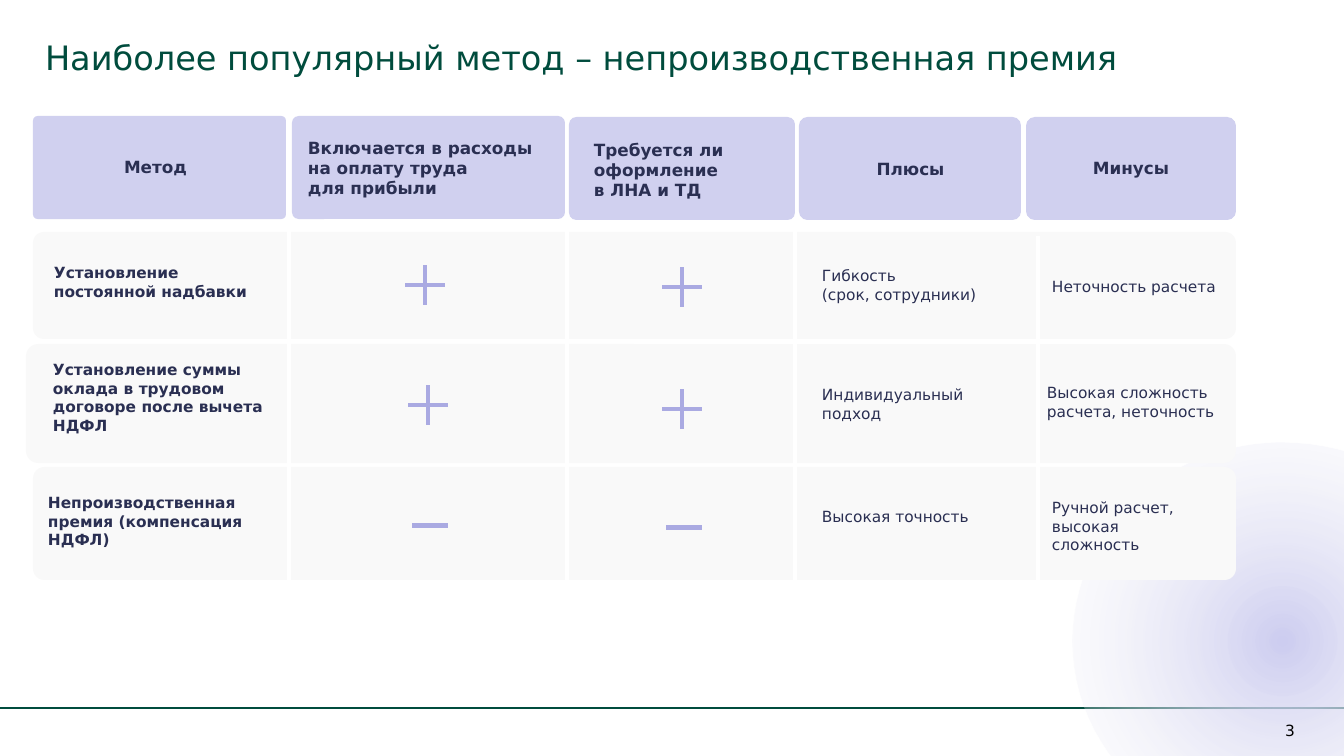
from lxml import etree
from pptx import Presentation
from pptx import util as u
from pptx.dml.color import RGBColor
from pptx.enum import shapes, text
from pptx.oxml.ns import qn

PX = 914400 / 50.4
COLORS = {
    "green": "004C3D", "navy": "2A2F52", "lavender": "D0D0EF", "row": "F9F9F9",
    "sign": "AAAAE2", "glow": "CECEF1", "white": "FFFFFF", "black": "000000",
}


def emu(px):
    return u.Emu(round(px * PX))


class Painter:
    font = "DejaVu Sans"

    def __init__(self, slide):
        self.slide = slide

    def color(self, name):
        return RGBColor.from_string(COLORS[name])

    def fill_text(self, shape, content, size, color="navy", bold=False,
                  align=text.PP_ALIGN.LEFT, spacing=None, inset=None, wrap=True):
        frame = shape.text_frame
        frame.word_wrap = wrap
        frame.auto_size = text.MSO_AUTO_SIZE.SHAPE_TO_FIT_TEXT
        frame.vertical_anchor = text.MSO_ANCHOR.TOP
        if inset is not None:
            frame.margin_left = frame.margin_right = emu(inset)
            frame.margin_top = frame.margin_bottom = emu(inset)
        for number, lines in enumerate(content):
            paragraph = frame.add_paragraph() if number else frame.paragraphs[0]
            paragraph.alignment = align
            if spacing:
                paragraph.line_spacing = spacing
            for index, line in enumerate(lines.split("\n")):
                if index:
                    paragraph.add_line_break()
                run = paragraph.add_run()
                run.text = line
                run.font.name = self.font
                run.font.size = u.Pt(size)
                run.font.bold = bold
                run.font.color.rgb = self.color(color)

    def title(self, box, content):
        shape = self.slide.shapes.title
        shape.left, shape.top, shape.width, shape.height = map(emu, box)
        self.fill_text(shape, [content], 48, "green", inset=3)

    def label(self, box, content, size=22, **style):
        shape = self.slide.shapes.add_textbox(*map(emu, box))
        self.fill_text(shape, content, size, **style)

    def shape(self, kind, box, color, adjustment=None):
        shape = self.slide.shapes.add_shape(kind, *map(emu, box))
        shape.shadow.inherit = False
        shape.line.fill.background()
        shape.fill.solid()
        shape.fill.fore_color.rgb = self.color(color)
        if adjustment is not None:
            shape.adjustments[0] = adjustment
        return shape

    def glow(self, box):
        shape = self.shape(shapes.MSO_SHAPE.OVAL, box, "glow")
        solid = shape._element.spPr.find(qn("a:solidFill"))
        gradient = etree.Element(qn("a:gradFill"), rotWithShape="1")
        stops = etree.SubElement(gradient, qn("a:gsLst"))
        for position, name in (("0", "glow"), ("100000", "row")):
            stop = etree.SubElement(stops, qn("a:gs"), pos=position)
            color = etree.SubElement(stop, qn("a:srgbClr"), val=COLORS[name])
        etree.SubElement(color, qn("a:alpha"), val="0")
        circle = etree.SubElement(gradient, qn("a:path"), path="circle")
        etree.SubElement(circle, qn("a:fillToRect"), l="50000", t="50000", r="50000", b="50000")
        solid.getparent().replace(solid, gradient)

    def line(self, start, end, color, width):
        connector = self.slide.shapes.add_connector(
            shapes.MSO_CONNECTOR.STRAIGHT, *map(emu, start + end))
        connector.line.color.rgb = self.color(color)
        connector.line.width = u.Pt(width)
        etree.SubElement(connector._element.spPr, qn("a:effectLst"))


CENTER = text.PP_ALIGN.CENTER
ROUNDED = shapes.MSO_SHAPE.ROUNDED_RECTANGLE
ROWS = [(33, 232, 1203, 107), (26, 344, 1210, 119), (33, 467, 1203, 113)]
DIVIDERS = [(289, 215, 652), (567, 220, 657), (795, 215, 640), (1038, 236, 673)]
HEADERS = [
    ((33, 116, 253, 103), 0.045, (29, 158, 253, 21), "Метод",
     {"align": CENTER, "spacing": 0.8}),
    ((292, 116, 273, 103), 0.065, (303, 135, 241, 66),
     "Включается в расходы\nна оплату труда\nдля прибыли", {}),
    ((569, 117, 226, 103), 0.072, (589, 137, 254, 66),
     "Требуется ли оформление\nв ЛНА и ТД", {}),
    ((799, 117, 222, 103), 0.081, (800, 156, 221, 25), "Плюсы", {"align": CENTER}),
    ((1026, 117, 210, 103), 0.085, (1032, 155, 198, 25), "Минусы", {"align": CENTER}),
]
SIGNS = [
    (shapes.MSO_SHAPE.MATH_PLUS, 54, 0.072, [(398, 258), (655, 260), (401, 378), (655, 382)]),
    (shapes.MSO_SHAPE.MATH_MINUS, 49, 0.083, [(406, 501), (660, 503)]),
]
METHODS = [
    ((49, 261, 230, 42), ["Установление", "постоянной надбавки"]),
    ((48, 358, 231, 80), ["Установление суммы оклада в трудовом договоре после вычета НДФЛ"]),
    ((43, 491, 239, 61), ["Непроизводственная премия (компенсация НДФЛ)"]),
]
REMARKS = [
    ((817, 264, 208, 42), "Гибкость\n(срок, сотрудники)", None),
    ((817, 383, 198, 42), "Индивидуальный подход", None),
    ((817, 508, 169, 20), "Высокая точность", 0.8),
    ((1047, 275, 180, 24), "Неточность расчета", None),
    ((1042, 381, 198, 42), "Высокая сложность расчета, неточность", None),
    ((1047, 496, 169, 42), "Ручной расчет, высокая сложность", None),
]


def main():
    presentation = Presentation()
    presentation.slide_width, presentation.slide_height = emu(1344), emu(756)
    painter = Painter(presentation.slides.add_slide(presentation.slide_layouts[5]))

    painter.title((42, 34, 1186, 46), "Наиболее популярный метод – непроизводственная премия")
    painter.line((0, 708), (1344, 708), "green", 2)
    painter.glow((1073, 443, 419, 396))
    painter.label((1282, 718, 16, 25), ["3"], color="black", align=CENTER, inset=3, wrap=False)

    for box in ROWS:
        painter.shape(ROUNDED, box, "row", 0.102)
    for x, top, bottom in DIVIDERS:
        painter.line((x, top), (x, bottom), "white", 6)
    for box, rounding, label_box, content, style in HEADERS:
        painter.shape(ROUNDED, box, "lavender", rounding)
        painter.label(label_box, [content], 24, bold=True, **style)
    for kind, size, thickness, corners in SIGNS:
        for left, top in corners:
            painter.shape(kind, (left, top, size, size), "sign", thickness)
    for box, content in METHODS:
        painter.label(box, content, bold=True)
    for box, content, spacing in REMARKS:
        painter.label(box, [content], spacing=spacing)

    presentation.save("out.pptx")


if __name__ == "__main__":
    main()
